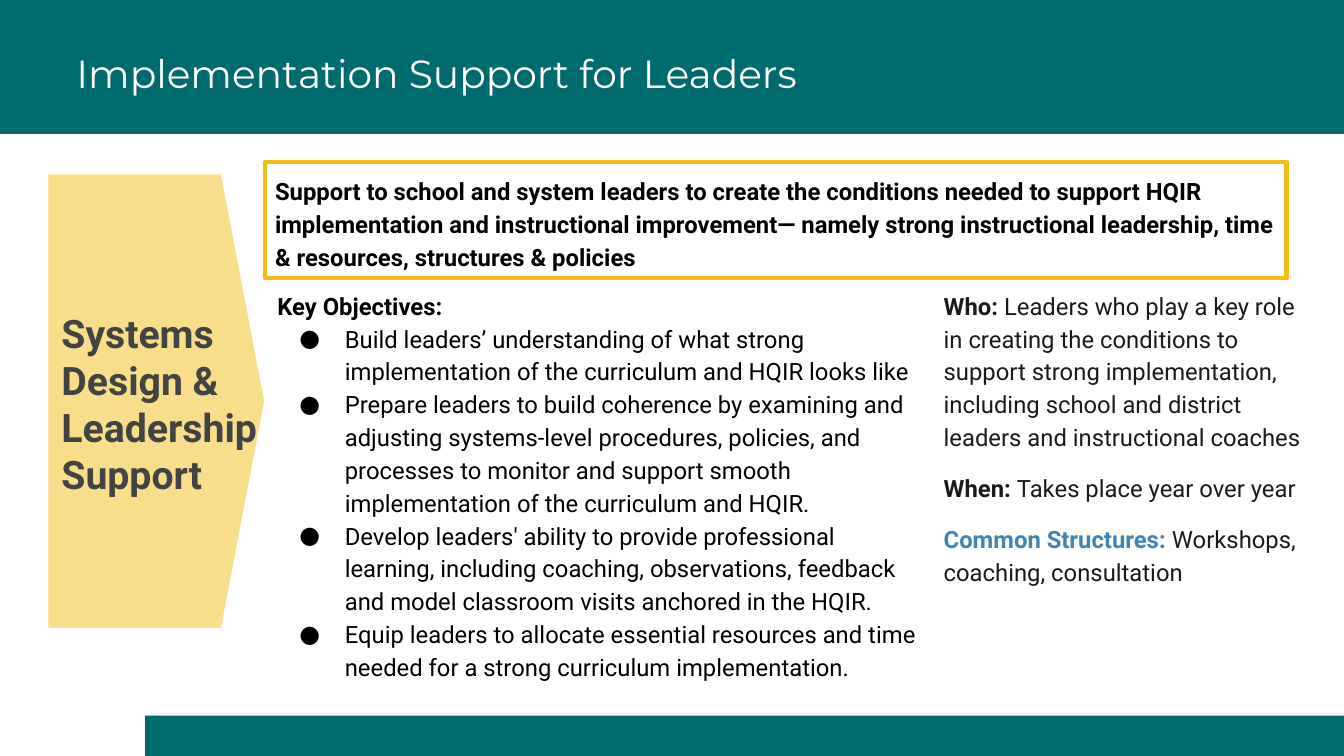
from lxml import etree
from pptx import Presentation
from pptx import util as u
from pptx.dml.color import RGBColor
from pptx.enum import shapes, text
from pptx.oxml.ns import qn

Inches, Pt = u.Inches, u.Pt
COLORS = {"teal": "006B6E", "gold": "F2BC14", "black": "000000", "ink": "1A1A1A",
          "grey": "434343", "blue": "3F84B4", "white": "FFFFFF"}

deck = Presentation()
deck.slide_width, deck.slide_height = Inches(13.33), Inches(7.5)
slide = deck.slides.add_slide(deck.slide_layouts[6])


def add_block(preset, place, fill=None):
    """Add a preset shape without outline, or a text box when preset is None."""
    box = [Inches(v) for v in place]
    if preset is None:
        return slide.shapes.add_textbox(*box)
    block = slide.shapes.add_shape(preset, *box)
    block.shadow.inherit = False
    block.line.fill.background()
    if fill:
        block.fill.solid()
        block.fill.fore_color.rgb = RGBColor.from_string(COLORS[fill])
    else:
        block.fill.background()
    return block


def write(block, paragraphs, size, font="Roboto", inset=0.13, spacing=1.15,
          anchor=text.MSO_ANCHOR.TOP):
    """Fill a block; each paragraph is (runs, space before, space after)."""
    frame = block.text_frame
    frame.word_wrap = True
    frame.vertical_anchor = anchor
    frame.margin_left = frame.margin_right = Inches(inset)
    frame.margin_top = frame.margin_bottom = Inches(inset)
    for i, (runs, before, after) in enumerate(paragraphs):
        para = frame.paragraphs[0] if i == 0 else frame.add_paragraph()
        para.alignment = text.PP_ALIGN.LEFT
        para.line_spacing = spacing
        para.space_before, para.space_after = Pt(before), Pt(after)
        for words, color, bold in runs:
            run = para.add_run()
            run.text = words
            run.font.name, run.font.size, run.font.bold = font, Pt(size), bold
            run.font.color.rgb = RGBColor.from_string(COLORS[color])
    return frame


# Header and footer bands
RECT = shapes.MSO_SHAPE.RECTANGLE
add_block(RECT, (0, 0, 13.33, 1.33), "teal")
add_block(RECT, (1.44, 7.1, 11.89, 0.42), "teal")

# Title
title = add_block(None, (0.66, 0.11, 11.67, 1.22))
write(title, [([("Implementation Support for Leaders", "white", False)], 0, 0)], 28,
      font="Montserrat", inset=0.1, spacing=1.0, anchor=text.MSO_ANCHOR.MIDDLE)

# Key objectives with bullets
objectives = [
    "Build leaders’ understanding of what strong implementation of the curriculum "
    "and HQIR looks like",
    "Prepare leaders to build coherence by examining and adjusting systems-level "
    "procedures, policies, and processes to monitor and support smooth "
    "implementation of the curriculum and HQIR.",
    "Develop leaders' ability to provide professional learning, including coaching, "
    "observations, feedback and model classroom visits anchored in the HQIR.",
    "Equip leaders to allocate essential resources and time needed for a strong "
    "curriculum implementation.",
]
key_objectives = add_block(None, (2.62, 2.72, 6.61, 4.1))
lines = [([("Key Objectives:", "black", True)], 0, 0)]
lines += [([(objective, "black", False)], 0, 0) for objective in objectives]
for para in write(key_objectives, lines, 17).paragraphs[1:]:
    props = para._p.get_or_add_pPr()
    props.set("marL", str(Inches(0.67)))
    props.set("indent", str(Inches(-0.45)))
    bullet_color = etree.SubElement(props, qn("a:buClr"))
    etree.SubElement(bullet_color, qn("a:srgbClr"), val=COLORS["black"])
    etree.SubElement(props, qn("a:buFont"), typeface="Roboto")
    etree.SubElement(props, qn("a:buChar"), char="●")

# Who, when and common structures
audience = add_block(None, (9.23, 2.72, 3.94, 3.22))
write(audience, [
    ([("Who:", "ink", True),
      (" Leaders who play a key role in creating the conditions to support strong "
       "implementation, including school and district leaders and instructional "
       "coaches", "ink", False)], 0, 0),
    ([("When: ", "ink", True), ("Takes place year over year", "ink", False)], 13, 0),
    ([("Common Structures:", "blue", True),
      (" Workshops, coaching, consultation", "ink", False)], 13, 13),
], 17)

# Translucent arrow tag with its label
tag = add_block(shapes.MSO_SHAPE.FLOWCHART_OFFPAGE_CONNECTOR, (-0.7, 2.91, 4.5, 2.14), "gold")
tag.rotation = 270
tag_color = tag._element.spPr.find(qn("a:solidFill"))[0]
etree.SubElement(tag_color, qn("a:alpha"), val="49000")
tag_label = add_block(None, (0.48, 2.94, 2.29, 2.15))
write(tag_label, [([("Systems Design & Leadership Support", "grey", True)], 0, 0)], 28,
      spacing=1.0)

# Framed summary
summary = add_block(RECT, (2.63, 1.61, 10.13, 1.15))
summary.line.color.rgb = RGBColor.from_string(COLORS["gold"])
summary.line.width = Pt(3)
etree.SubElement(summary._element.spPr.find(qn("a:ln")), qn("a:round"))
write(summary, [([(
    "Support to school and system leaders to create the conditions needed to support "
    "HQIR implementation and instructional improvement— namely strong instructional "
    "leadership, time & resources, structures & policies", "black", True)], 0, 13)],
    17, inset=0.1)

deck.save("out.pptx")
